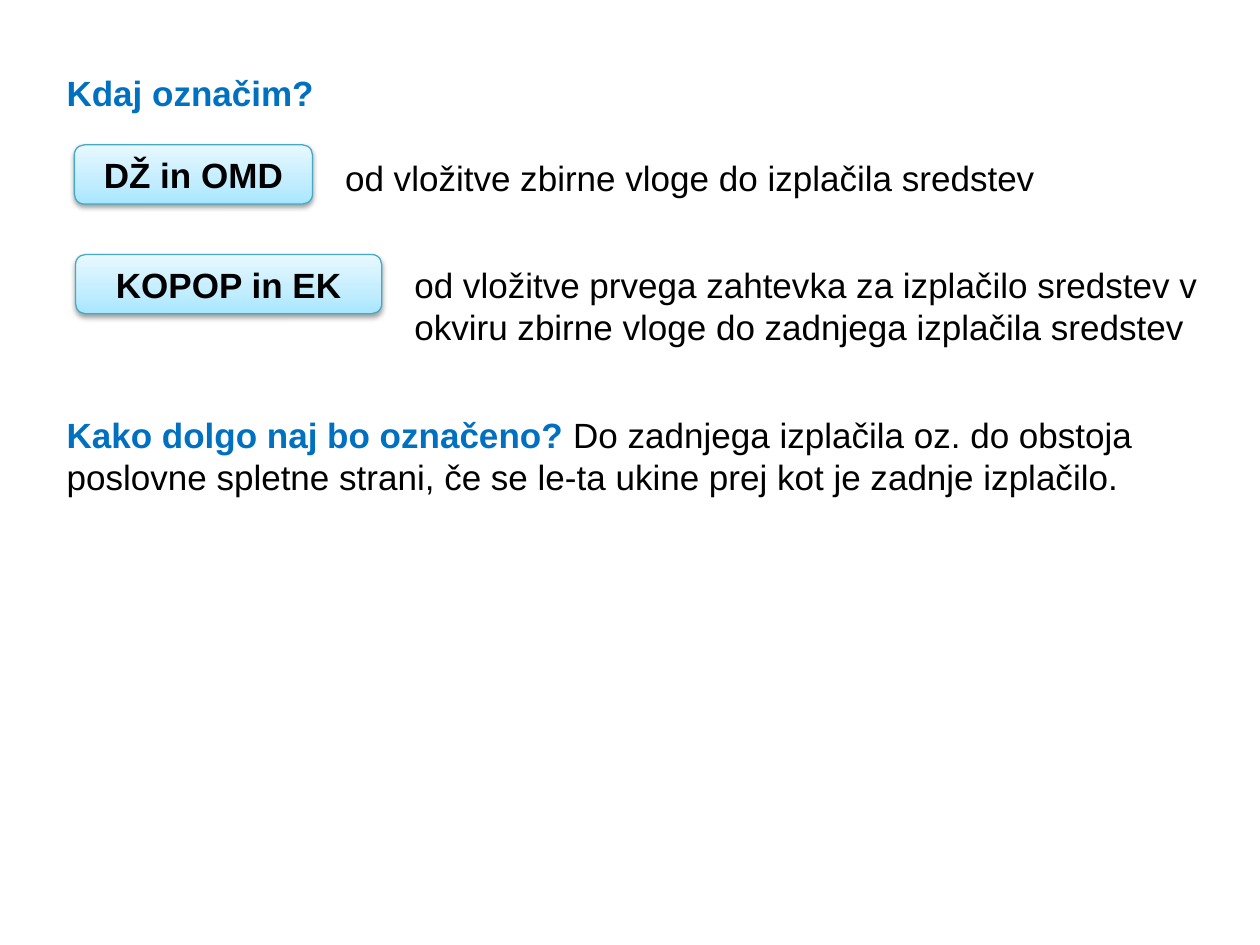
from pptx import Presentation
from pptx.dml.color import RGBColor
from pptx.enum import shapes, text
from pptx.oxml import parse_xml
from pptx.oxml.ns import nsdecls
from pptx.util import Inches, Pt

HUES = {"head": "0070C0", "body": "000000", "edge": "46AAC5", "shade": "000000"}
STOPS = {0: "A7E6FF", 35: "C1EDFF", 100: "E7F8FF"}


def write(par, words, hue="body", bold=False, align=None):
    """Add a run to a paragraph."""
    if align is not None:
        par.alignment = align
    run = par.add_run()
    run.text = words
    font = run.font
    font.name, font.size, font.bold = "Arial", Pt(20), bold
    font.color.rgb = RGBColor.from_string(HUES[hue])


def add_text(slide, x, y, w, h, wrap=True):
    """Add a text box and return its first paragraph."""
    box = slide.shapes.add_textbox(Inches(x), Inches(y), Inches(w), Inches(h))
    frame = box.text_frame
    frame.word_wrap = wrap
    frame.auto_size = text.MSO_AUTO_SIZE.SHAPE_TO_FIT_TEXT
    return frame.paragraphs[0]


def add_label(slide, words, x, y, w, h=0.47):
    """Add a rounded label with a gradient and a soft shadow."""
    label = slide.shapes.add_shape(
        shapes.MSO_SHAPE.ROUNDED_RECTANGLE, Inches(x), Inches(y), Inches(w), Inches(h))
    props = label._element.spPr
    stops = "".join(
        f'<a:gs pos="{pos * 1000}"><a:srgbClr val="{hue}"/></a:gs>'
        for pos, hue in STOPS.items())
    props.append(parse_xml(
        f'<a:gradFill {nsdecls("a")} rotWithShape="1"><a:gsLst>{stops}</a:gsLst>'
        '<a:lin ang="16200000" scaled="1"/></a:gradFill>'))
    label.line.color.rgb = RGBColor.from_string(HUES["edge"])
    label.line.width = Pt(0.75)
    props.append(parse_xml(
        f'<a:effectLst {nsdecls("a")}>'
        '<a:outerShdw blurRad="40000" dist="20000" dir="5400000" rotWithShape="0">'
        f'<a:srgbClr val="{HUES["shade"]}"><a:alpha val="38000"/></a:srgbClr>'
        '</a:outerShdw></a:effectLst>'))
    frame = label.text_frame
    frame.vertical_anchor = text.MSO_ANCHOR.MIDDLE
    write(frame.paragraphs[0], words, bold=True, align=text.PP_ALIGN.CENTER)


def main():
    deck = Presentation()
    deck.slide_width, deck.slide_height = Inches(10), Inches(7.5)
    slide = deck.slides.add_slide(deck.slide_layouts[6])

    # When to mark
    write(add_text(slide, 0.43, 0.52, 2.6, 0.44), "Kdaj označim?", hue="head", bold=True)

    # Measures and their periods
    add_label(slide, "DŽ in OMD", 0.59, 1.15, 1.89)
    write(add_text(slide, 2.64, 1.19, 5.72, 0.44, wrap=False),
          "od vložitve zbirne vloge do izplačila sredstev")
    add_label(slide, "KOPOP in EK", 0.6, 2.02, 2.43)
    write(add_text(slide, 3.19, 2.04, 6.46, 0.77),
          "od vložitve prvega zahtevka za izplačilo sredstev v okviru zbirne vloge "
          "do zadnjega izplačila sredstev")

    # How long to mark
    par = add_text(slide, 0.43, 3.23, 9.21, 0.77)
    write(par, "Kako dolgo naj bo označeno? ", hue="head", bold=True)
    write(par, "Do zadnjega izplačila oz. do obstoja poslovne spletne strani, "
               "če se le-ta ukine prej kot je zadnje izplačilo.")

    deck.save("out.pptx")


if __name__ == "__main__":
    main()
